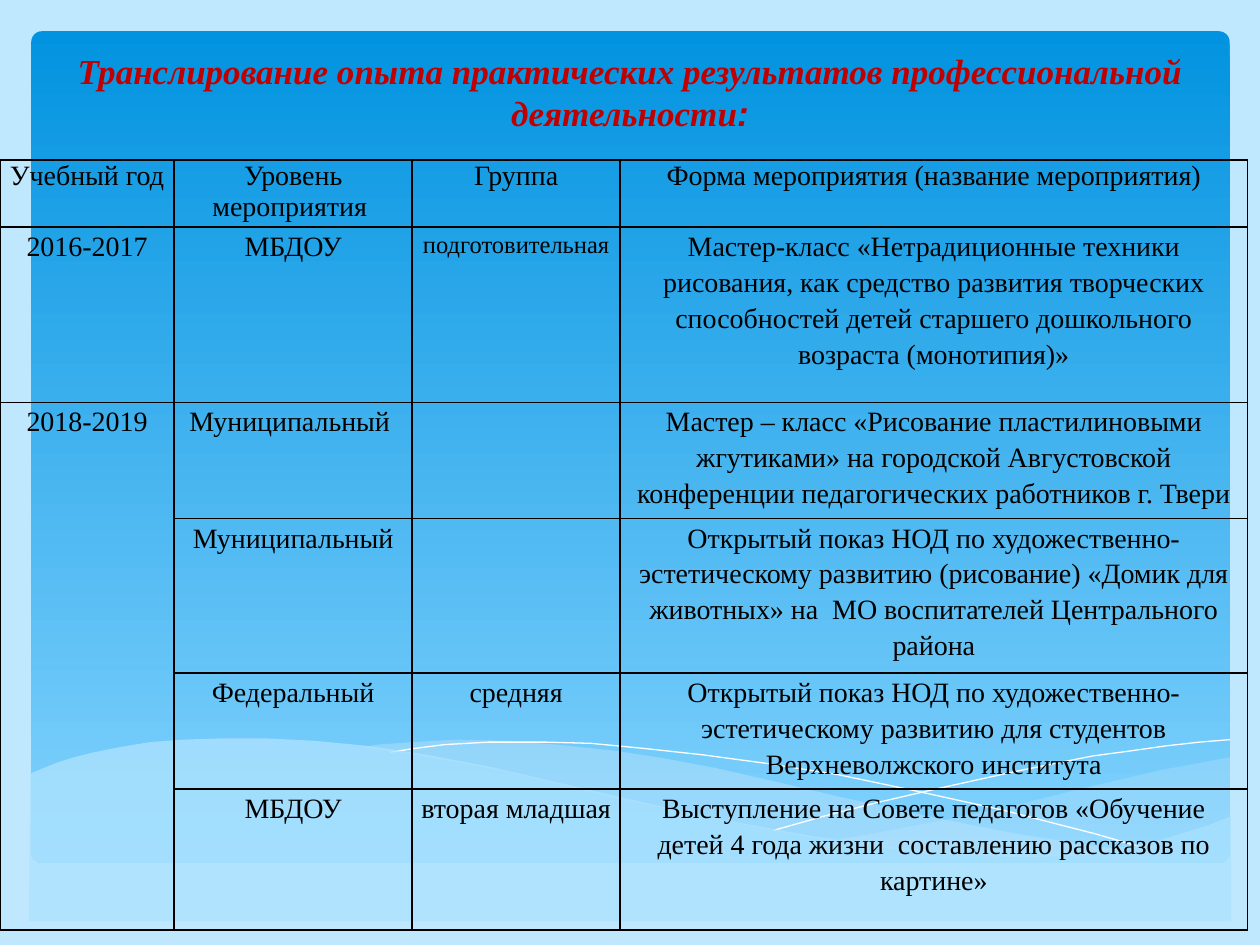
from lxml import etree
from pptx import Presentation
from pptx.dml.color import RGBColor
from pptx.enum.shapes import MSO_SHAPE
from pptx.enum.text import MSO_ANCHOR, PP_ALIGN
from pptx.oxml.ns import qn
from pptx.util import Cm, Pt

ROUNDED = MSO_SHAPE.ROUNDED_RECTANGLE
CENTER = PP_ALIGN.CENTER
MIDDLE = MSO_ANCHOR.MIDDLE

BACKGROUND = RGBColor(0xBF, 0xE8, 0xFE)
SKY_TOP = RGBColor(0x02, 0x93, 0xE0)
SKY_BOTTOM = RGBColor(0x83, 0xD3, 0xFE)
FAR_WAVE = RGBColor(0xC6, 0xE7, 0xFC)
NEAR_WAVE = RGBColor(0xAD, 0xE2, 0xFE)
WHITE = RGBColor(0xFF, 0xFF, 0xFF)
BLACK = RGBColor(0, 0, 0)
RED = RGBColor(0xC0, 0, 0)

SERIF = "Times New Roman"
SANS = "Arial"
WAVE_UNIT = Cm(0.0254)  # wave points are in hundredths of an inch

RIGHT_WAVE = [
    (976, 601), (950, 606), (922, 611), (892, 618), (862, 625), (806, 639),
    (754, 650), (707, 659), (662, 667), (692, 671), (719, 674), (745, 677),
    (770, 679), (793, 679), (815, 680), (845, 679), (873, 676), (898, 672),
    (922, 667), (944, 661), (964, 654), (977, 649), (977, 601)]
MIDDLE_WAVE = [
    (894, 675), (867, 671), (808, 662), (742, 649), (669, 633), (614, 620),
    (570, 610), (528, 602), (489, 596), (442, 591), (400, 588), (362, 587),
    (328, 589), (300, 591), (287, 593), (323, 598), (363, 605), (405, 613),
    (450, 624), (491, 634), (530, 642), (567, 650), (602, 657), (635, 663),
    (666, 668), (696, 672), (723, 676), (749, 678), (774, 679), (797, 680),
    (829, 680), (858, 679), (877, 677)]
NEAR_SHORE = [
    (977, 648), (959, 655), (940, 661), (920, 667), (899, 671), (875, 675),
    (850, 677), (823, 679), (793, 678), (761, 677), (726, 674), (688, 670),
    (647, 664), (603, 656), (555, 647), (503, 635), (447, 622), (391, 609),
    (339, 599), (292, 592), (250, 588), (211, 586), (177, 586), (146, 587),
    (119, 589), (95, 593), (75, 597), (59, 601), (46, 605), (36, 609),
    (24, 614), (23, 731), (977, 731)]
LONG_CREST = [
    (310, 597), (329, 594), (353, 591), (388, 589), (433, 589), (469, 590),
    (511, 594), (557, 599), (609, 606), (666, 615), (728, 628), (796, 643),
    (870, 662), (908, 673)]
SHORT_CREST = [
    (614, 659), (653, 648), (696, 637), (748, 625), (807, 612), (867, 600),
    (897, 596), (925, 592), (952, 589), (976, 587)]

TITLE = "Транслирование опыта практических результатов профессиональной деятельности"
COLUMNS = [3.51, 4.8, 4.19, 12.65]
ROWS = [1.35, 3.53, 2.34, 3.12, 2.34, 2.84]
EVENTS = [
    ["Учебный год", "Уровень мероприятия ", "Группа",
     "Форма мероприятия (название мероприятия)"],
    ["2016-2017", "МБДОУ", "подготовительная",
     "Мастер-класс «Нетрадиционные техники рисования, как средство развития "
     "творческих способностей детей старшего дошкольного возраста (монотипия)»"],
    ["2018-2019", "Муниципальный ", "",
     "Мастер – класс «Рисование пластилиновыми жгутиками» на городской "
     "Августовской конференции педагогических работников г. Твери"],
    ["", "Муниципальный", "",
     "Открытый показ НОД по художественно-эстетическому развитию (рисование) "
     "«Домик для животных» на  МО воспитателей Центрального района"],
    ["", "Федеральный", "средняя",
     "Открытый показ НОД по художественно- эстетическому развитию для "
     "студентов Верхневолжского института"],
    ["", "МБДОУ", "вторая младшая",
     "Выступление на Совете педагогов «Обучение детей 4 года жизни  "
     "составлению рассказов по картине»"],
]


class SlideBuilder:
    def __init__(self, slide):
        self.slide = slide
        self.shapes = slide.shapes
        slide.background.fill.solid()
        slide.background.fill.fore_color.rgb = BACKGROUND

    def style_run(self, span, size, color, font=SERIF):
        span.font.size = Pt(size)
        span.font.name = font
        span.font.color.rgb = color

    def sky(self, left, top, width, height):
        panel = self.shapes.add_shape(ROUNDED, Cm(left), Cm(top), Cm(width), Cm(height))
        panel.adjustments[0] = 0.013
        panel.shadow.inherit = False
        panel.line.fill.background()
        panel.fill.gradient()
        panel.fill.gradient_angle = 270
        for stop, color, position in zip(
                panel.fill.gradient_stops, (SKY_TOP, SKY_BOTTOM), (0, 1)):
            stop.color.rgb = color
            stop.position = position

    def outline(self, points, closed):
        builder = self.shapes.build_freeform(*points[0], scale=WAVE_UNIT)
        builder.add_line_segments(points[1:], close=closed)
        shape = builder.convert_to_shape()
        shape.shadow.inherit = False
        return shape

    def wave(self, points, color, opacity):
        shape = self.outline(points, True)
        shape.line.fill.background()
        shape.fill.solid()
        shape.fill.fore_color.rgb = color
        tint = shape.element.spPr.find(qn("a:solidFill")).find(qn("a:srgbClr"))
        etree.SubElement(tint, qn("a:alpha"), val=str(opacity * 1000))

    def crest(self, points):
        shape = self.outline(points, False)
        shape.fill.background()
        shape.line.color.rgb = WHITE
        shape.line.width = Pt(0)

    def title(self, text, left, top, width, height):
        box = self.shapes.title
        self.shapes.element.append(box.element)  # bring in front of the waves
        box.left, box.top, box.width, box.height = Cm(left), Cm(top), Cm(width), Cm(height)
        frame = box.text_frame
        frame.text = text
        frame.word_wrap = True
        frame.vertical_anchor = MIDDLE
        para = frame.paragraphs[0]
        para.alignment = CENTER
        para.add_run().text = ":"
        for span, font in zip(para.runs, (SERIF, SANS)):
            self.style_run(span, 20, RED, font)
            span.font.bold = span.font.italic = True

    def borders(self, cell):
        properties = cell._tc.get_or_add_tcPr()
        for side in ("a:lnL", "a:lnR", "a:lnT", "a:lnB"):
            line = etree.SubElement(properties, qn(side), w=str(Pt(1)))
            fill = etree.SubElement(line, qn("a:solidFill"))
            etree.SubElement(fill, qn("a:srgbClr"), val=str(BLACK))

    def fill_cell(self, cell, text, heading, size):
        self.borders(cell)
        cell.fill.background()
        cell.margin_left = cell.margin_right = Cm(0.1 if heading else 0.18)
        cell.margin_top = cell.margin_bottom = 0
        cell.text_frame.text = text
        para = cell.text_frame.paragraphs[0]
        para.alignment = CENTER
        para.space_after = Pt(10)
        para.line_spacing = 1.0 if heading else 1.15
        for span in para.runs:
            self.style_run(span, size, BLACK)

    def table(self, rows, left, top, widths, heights):
        table = self.shapes.add_table(
            len(rows), len(widths), Cm(left), Cm(top),
            Cm(sum(widths)), Cm(sum(heights))).table
        table.first_row = table.horz_banding = False
        for column, width in zip(table.columns, widths):
            column.width = Cm(width)
        for row, height in zip(table.rows, heights):
            row.height = Cm(height)
        for r, texts in enumerate(rows):
            for c, text in enumerate(texts):
                size = 14 if text == "подготовительная" else 16
                self.fill_cell(table.cell(r, c), text, r == 0, size)
        return table


def main():
    deck = Presentation()
    deck.slide_width, deck.slide_height = Cm(25.4), Cm(19.05)
    page = SlideBuilder(deck.slides.add_slide(deck.slide_layouts[5]))
    page.sky(0.63, 0.63, 24.16, 16.76)
    page.wave(RIGHT_WAVE, FAR_WAVE, 29)
    page.wave(MIDDLE_WAVE, FAR_WAVE, 40)
    page.crest(LONG_CREST)
    page.crest(SHORT_CREST)
    page.wave(NEAR_SHORE, NEAR_WAVE, 78)
    page.title(TITLE, 0, 0, 25.4, 3.68)
    events = page.table(EVENTS, 0, 3.23, COLUMNS, ROWS)
    events.cell(2, 0).merge(events.cell(5, 0))
    deck.save("out.pptx")


if __name__ == "__main__":
    main()
